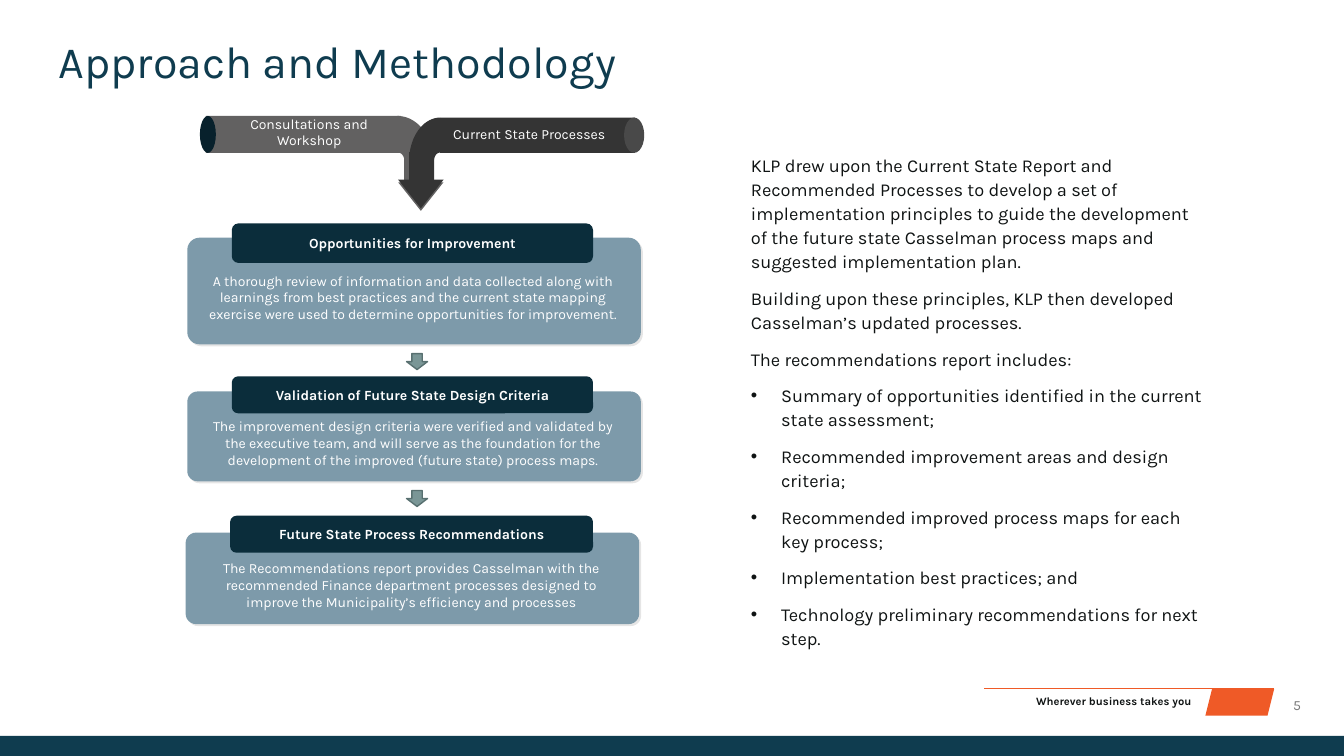
"""Build the Approach and Methodology slide on a grid of 160 columns by 90 rows."""
import dataclasses
import math

import lxml.etree
import pptx
import pptx.dml.color
import pptx.enum.shapes
import pptx.enum.text
import pptx.oxml.ns
import pptx.shapes.autoshape
import pptx.util

RGBColor = pptx.dml.color.RGBColor
KIND = pptx.enum.shapes.MSO_SHAPE
ALIGN = pptx.enum.text.PP_ALIGN
ANCHOR = pptx.enum.text.MSO_ANCHOR
qn = pptx.oxml.ns.qn
Shape = pptx.shapes.autoshape.Shape

WHITE = RGBColor(0xFF, 0xFF, 0xFF)
INK = RGBColor(0x0F, 0x13, 0x13)
NAVY = RGBColor(0x0F, 0x3C, 0x4F)
DEEP = RGBColor(0x0B, 0x2D, 0x3B)
BORE = RGBColor(0x08, 0x21, 0x2C)
STEEL = RGBColor(0x7D, 0x9A, 0xAA)
ORANGE = RGBColor(0xEF, 0x5A, 0x27)
GREY = RGBColor(0x62, 0x61, 0x61)
DARK = RGBColor(0x34, 0x34, 0x34)
RIM = RGBColor(0x49, 0x49, 0x49)
PALE = RGBColor(0x79, 0x79, 0x79)
SAGE = RGBColor(0x7A, 0x96, 0x96)
MOSS = RGBColor(0x58, 0x70, 0x70)

FONT = "Karla"
CELL = pptx.util.Inches(1) / 12
COLS, ROWS = 160, 90


@dataclasses.dataclass
class Box:
    """A place on the grid."""
    col: float
    row: float
    wide: float
    high: float


@dataclasses.dataclass
class Part:
    """A plain filled shape."""
    kind: KIND
    box: Box
    fill: RGBColor
    turn: float = 0


@dataclasses.dataclass
class Bend:
    """A quarter ring around a centre; a negative width bends left."""
    col: float
    row: float
    wide: float
    high: float
    bore: float
    fill: RGBColor


@dataclasses.dataclass
class Step:
    """A panel with a heading and a text."""
    panel: Box
    head: Box
    body: float
    title: str
    text: str


@dataclasses.dataclass
class Style:
    """The look of a text."""
    size: float
    tint: RGBColor
    bold: bool = False
    align: ALIGN = ALIGN.CENTER
    anchor: ANCHOR = ANCHOR.TOP
    side: float = 0
    edge: float = 0
    line: float = 1
    gap: float = 0


LABEL = Style(10, WHITE, anchor=ANCHOR.MIDDLE, side=1)
HEAD = Style(10, WHITE, bold=True, anchor=ANCHOR.MIDDLE, side=1.2, edge=0.6)
DETAIL = Style(10, WHITE, side=2.4)
PROSE = Style(13, INK, align=ALIGN.LEFT, anchor=ANCHOR.MIDDLE, line=1.1, gap=9)

FOOTER = [
    Part(KIND.PARALLELOGRAM, Box(143.5, 82, 8.2, 3.2), ORANGE),
    Part(KIND.RECTANGLE, Box(0, 87.6, COLS, 2.4), NAVY),
]
PIPES = [
    Bend(47.3, 19.2, 4.3, 5.4, 0.2, GREY),
    Part(KIND.RECTANGLE, Box(24.5, 13.8, 23.2, 4.4), GREY),
    Part(KIND.OVAL, Box(23.8, 13.8, 1.9, 4.4), BORE),
    Part(KIND.ISOSCELES_TRIANGLE, Box(47.4, 21.7, 5.4, 3.4), GREY, 180),
    Part(KIND.RECTANGLE, Box(48.1, 17.8, 3.2, 3.8), GREY),
    Part(KIND.ISOSCELES_TRIANGLE, Box(47.4, 21.4, 5.4, 3.4), DARK, 180),
    Part(KIND.RECTANGLE, Box(48.7, 18.1, 3, 3.7), DARK),
    Bend(52.4, 19.2, -3.7, 5.2, 0.2, DARK),
    Part(KIND.RECTANGLE, Box(52.4, 14, 23.2, 4.2), DARK),
    Part(KIND.OVAL, Box(74.3, 14, 2.4, 4.2), RIM),
]
STEPS = [
    Step(Box(22.3, 28.3, 54, 12.7), Box(27.6, 26.6, 43, 4.7), 32.4,
         "Opportunities for Improvement",
         "A thorough review of information and data collected along with learnings from best practices and the current state mapping exercise were used to determine opportunities for improvement."),
    Step(Box(22.3, 46.6, 54, 10.7), Box(27.6, 44.8, 43, 4.4), 49.7,
         "Validation of Future State Design Criteria",
         "The improvement design criteria were verified and validated by the executive team, and will serve as the foundation for the development of the improved (future state) process maps."),
    Step(Box(22.1, 63.4, 54, 10.9), Box(27.4, 61.4, 43.2, 4.4), 66.6,
         "Future State Process Recommendations",
         "The Recommendations report provides Casselman with the recommended Finance department processes designed to improve the Municipality’s efficiency and processes"),
]
INTRO = [
    "KLP drew upon the Current State Report and Recommended Processes to develop a set of implementation principles to guide the development of the future state Casselman process maps and suggested implementation plan.",
    "Building upon these principles, KLP then developed Casselman’s updated processes.",
    "The recommendations report includes:",
]
POINTS = [
    "Summary of opportunities identified in the current state assessment;",
    "Recommended improvement areas and design criteria;",
    "Recommended improved process maps for each key process;",
    "Implementation best practices; and",
    "Technology preliminary recommendations for next step.",
]
TEXTS = [
    (Box(117.2, 82.1, 24.7, 2.9), "Wherever business takes you",
     Style(8, INK, bold=True, align=ALIGN.RIGHT, edge=0.6)),
    (Box(7, 4.7, 143.2, 5.8), "Approach and Methodology",
     Style(32, NAVY, align=ALIGN.LEFT, line=0.9)),
    (Box(148.8, 81.5, 11.2, 4.8), "5", Style(10, PALE, anchor=ANCHOR.MIDDLE)),
    (Box(25.7, 14.5, 22.2, 2.4), "Consultations and Workshop", LABEL),
    (Box(51.7, 14.8, 22.6, 2.4), "Current State Processes", LABEL),
]


def grid(*cells: float) -> list[pptx.util.Emu]:
    """Turn grid cells into lengths."""
    return [pptx.util.Emu(round(cell * CELL)) for cell in cells]


def place(box: Box) -> list[pptx.util.Emu]:
    """Give the left, top, width and height of a box."""
    return grid(box.col, box.row, box.wide, box.high)


def paint(shape: Shape, fill: RGBColor) -> Shape:
    """Fill a shape, without line or shadow."""
    shape.shadow.inherit = False
    shape.fill.solid()
    shape.fill.fore_color.rgb = fill
    shape.line.fill.background()
    return shape


def draw(shapes, part: Part | Bend) -> Shape:
    """Draw a plain shape or a bend."""
    if isinstance(part, Part):
        shape = shapes.add_shape(part.kind, *place(part.box))
        shape.rotation = part.turn
        return paint(shape, part.fill)
    turns = [math.radians(5 * i) for i in range(19)]
    rings = [(1, turns), (part.bore, turns[::-1])]
    dots = [grid(part.col + part.wide * k * math.cos(t), part.row - part.high * k * math.sin(t))
            for k, arc in rings for t in arc]
    path = shapes.build_freeform(*dots[0])
    path.add_line_segments(dots[1:], close=True)
    return paint(path.convert_to_shape(), part.fill)


def write(shape: Shape, text: str, style: Style) -> None:
    """Set and format the text of a shape."""
    frame = shape.text_frame
    frame.text = text
    frame.word_wrap = True
    frame.vertical_anchor = style.anchor
    frame.margin_left, frame.margin_right = grid(style.side, style.side)
    frame.margin_top, frame.margin_bottom = grid(style.edge, style.edge)
    for i, para in enumerate(frame.paragraphs):
        para.alignment = style.align
        para.line_spacing = style.line
        para.space_before = pptx.util.Pt(style.gap if i else 0)
        if para.text in POINTS:
            props = para._p.get_or_add_pPr()
            dent, = grid(3.6)
            props.set("marL", str(dent))
            props.set("indent", str(-dent))
            lxml.etree.SubElement(props, qn("a:buFont"), typeface="Arial")
            lxml.etree.SubElement(props, qn("a:buChar"), char="•")
        for run in para.runs:
            run.font.name = FONT
            run.font.size = pptx.util.Pt(style.size)
            run.font.bold = style.bold
            run.font.color.rgb = style.tint


def shade(shape: Shape) -> None:
    """Cast a faint shadow down and right."""
    glow = shape._element.spPr.find(qn("a:effectLst"))
    cast = lxml.etree.SubElement(glow, qn("a:outerShdw"), blurRad="0", dist="25400",
                                 dir="2700000", algn="tl", rotWithShape="0")
    tint = lxml.etree.SubElement(cast, qn("a:srgbClr"), val="000000")
    lxml.etree.SubElement(tint, qn("a:alpha"), val="10000")


def stack(shapes, step: Step) -> None:
    """Draw one step of the flow."""
    panel = draw(shapes, Part(KIND.ROUNDED_RECTANGLE, step.panel, STEEL))
    panel.adjustments[0] = 0.115
    shade(panel)
    body = Box(step.panel.col + 0.1, step.body, 53.5, 7)
    write(shapes.add_textbox(*place(body)), step.text, DETAIL)
    write(draw(shapes, Part(KIND.ROUNDED_RECTANGLE, step.head, DEEP)), step.title, HEAD)


def main() -> None:
    """Build and save the slide."""
    deck = pptx.Presentation()
    deck.slide_width, deck.slide_height = grid(COLS, ROWS)
    shapes = deck.slides.add_slide(deck.slide_layouts[6]).shapes
    for part in FOOTER + PIPES:
        draw(shapes, part)
    rule = shapes.add_connector(pptx.enum.shapes.MSO_CONNECTOR.STRAIGHT,
                                *grid(117.2, 82, 151.7, 82))
    rule.line.color.rgb = ORANGE
    rule.line.width = pptx.util.Pt(1)
    lxml.etree.SubElement(rule._element.spPr, qn("a:effectLst"))
    for box, text, style in TEXTS:
        write(shapes.add_textbox(*place(box)), text, style)
    prose = shapes.add_textbox(*place(Box(89.4, 10.6, 54.5, 74.2)))
    write(prose, "\n".join(INTRO + POINTS), PROSE)
    for step in STEPS:
        stack(shapes, step)
    for row in (42.1, 58.4):
        arrow = draw(shapes, Part(KIND.DOWN_ARROW, Box(48.4, row, 2.5, 1.9), SAGE))
        arrow.line.color.rgb = MOSS
        arrow.line.width = pptx.util.Pt(1)
    deck.save("out.pptx")


if __name__ == "__main__":
    main()
